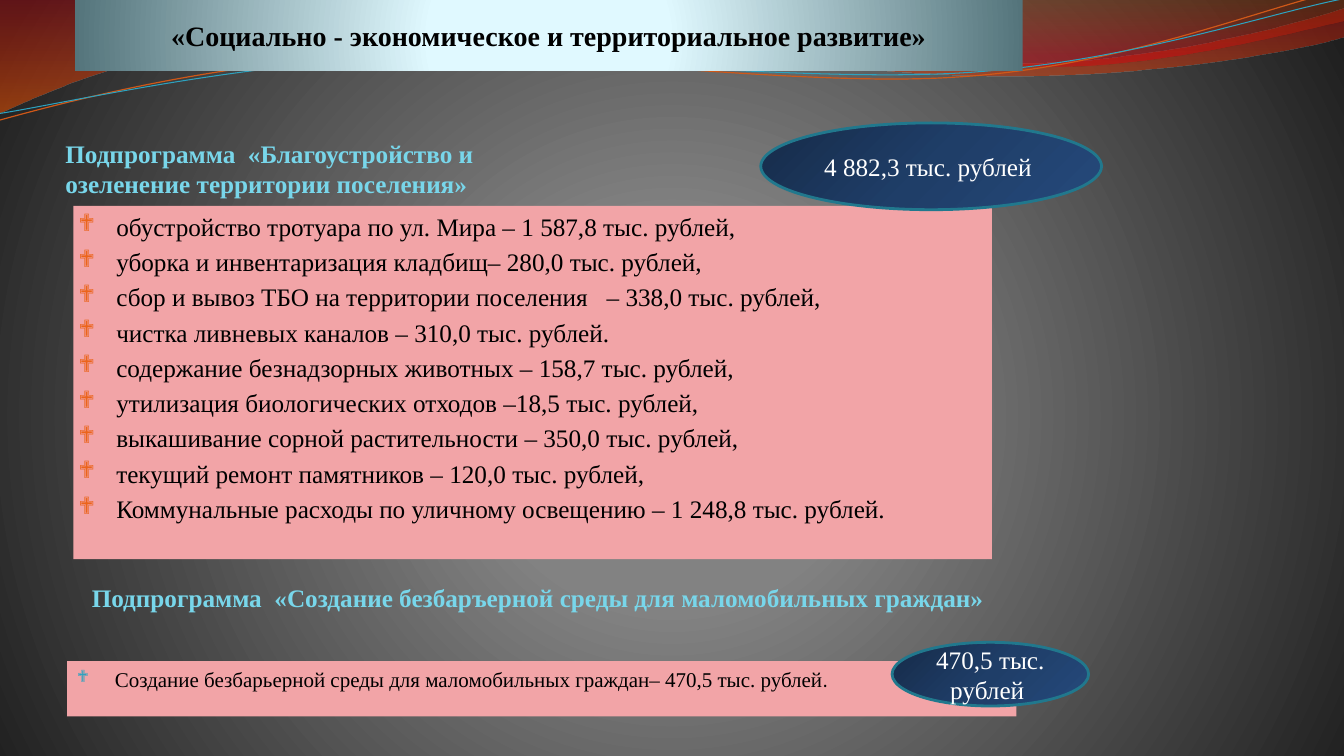
from lxml import etree
from pptx import Presentation
from pptx.dml.color import RGBColor
from pptx.enum import shapes, text
from pptx.oxml import parse_xml
from pptx.oxml.ns import nsdecls, qn
from pptx.util import Pt

BLACK = RGBColor(0x00, 0x00, 0x00)
WHITE = RGBColor(0xFF, 0xFF, 0xFF)
PINK = RGBColor(0xF2, 0xA4, 0xA7)
SKY = RGBColor(0x78, 0xD6, 0xEA)
TEAL = RGBColor(0x2D, 0xA2, 0xBF)
DARK_TEAL = RGBColor(0x21, 0x78, 0x8D)
ORANGE = RGBColor(0xEB, 0x64, 0x1B)
RUST = RGBColor(0xCF, 0x58, 0x18)
# Gradient stops: position %, colour, opacity %
GREY_STOPS = [(0, RGBColor(0x89, 0x89, 0x89), 100), (25, RGBColor(0x82, 0x82, 0x82), 100),
              (100, RGBColor(0x1F, 0x1F, 0x1F), 100)]
ICE_STOPS = [(0, RGBColor(0xE1, 0xFA, 0xFF), 100), (25, RGBColor(0xE0, 0xF9, 0xFF), 100),
             (100, RGBColor(0x54, 0x74, 0x7B), 100)]
NAVY_STOPS = [(0, RGBColor(0x16, 0x2B, 0x49), 100), (50, RGBColor(0x1F, 0x3E, 0x68), 100),
              (100, RGBColor(0x25, 0x49, 0x7B), 100)]
WIDE_WAVE_STOPS = [(0, RGBColor(0xAF, 0x09, 0x11), 45), (100, RGBColor(0xEE, 0x53, 0x00), 55)]
RIGHT_WAVE_STOPS = [(0, RGBColor(0xC2, 0x44, 0x00), 30), (80, RGBColor(0xDC, 0x00, 0x0B), 45)]
BOTTOM_CENTRE = (10, 110, 10, 100)
TOP_LEFT = (0, 0, 100, 100)
FONT = "Times New Roman"


def set_gradient(owner, fill, stops, focus=None):
    """Fill with a circular gradient around focus (l, t, r, b in %), or a vertical one."""
    fill.gradient()
    gradient = owner.element.xpath(".//a:gradFill")[0]
    gradient.clear()
    stop_list = etree.SubElement(gradient, qn("a:gsLst"))
    for position, color, opacity in stops:
        alpha = f'<a:alpha val="{opacity * 1000}"/>' if opacity < 100 else ""
        stop_list.append(parse_xml(
            f'<a:gs {nsdecls("a")} pos="{position * 1000}">'
            f'<a:srgbClr val="{color}">{alpha}</a:srgbClr></a:gs>'))
    if focus:
        direction = etree.SubElement(gradient, qn("a:path"), {"path": "circle"})
        sides = {side: str(value * 1000) for side, value in zip("ltrb", focus)}
        etree.SubElement(direction, qn("a:fillToRect"), sides)
    else:
        etree.SubElement(gradient, qn("a:lin"), {"ang": "5400000", "scaled": "0"})


def format_paragraph(paragraph, size, color, bold=False, bullet=None):
    """Style the runs; bullet is (colour, size %)."""
    if bullet:
        properties = paragraph._p.get_or_add_pPr()
        properties.set("marL", str(Pt(27)))
        properties.set("indent", str(-Pt(27)))
        bullet_color = etree.SubElement(properties, qn("a:buClr"))
        etree.SubElement(bullet_color, qn("a:srgbClr"), val=str(bullet[0]))
        etree.SubElement(properties, qn("a:buSzPct"), val=str(bullet[1] * 1000))
        etree.SubElement(properties, qn("a:buFont"), typeface="Wingdings")
        etree.SubElement(properties, qn("a:buChar"), char="❖")
    for run in paragraph.runs:
        run.font.name = FONT
        run.font.size = Pt(size)
        run.font.bold = bold
        run.font.color.rgb = color


presentation = Presentation()
presentation.slide_width, presentation.slide_height = Pt(960), Pt(540)
slide = presentation.slides.add_slide(presentation.slide_layouts[5])
set_gradient(slide, slide.background.fill, GREY_STOPS, BOTTOM_CENTRE)

# Waves: start point, then line ends (x, y) and Bézier segments (two controls, end)
WAVES = [
    ((0, 0), [(423, -1), (456, 12, 637, 45, 728, 45), (819, 45, 920, 19, 960, 6), (961, 26),
              (944, 32, 835, 55, 716, 54), (597, 54, 366, 20, 247, 24),
              (123, 26, 44, 60, -1, 81)], WIDE_WAVE_STOPS, None, 0),
    ((460, -1), [(489, 8, 654, 45, 738, 47), (822, 50, 923, 23, 960, 15), (960, 0)],
     RIGHT_WAVE_STOPS, None, 0),
    ((-1, 86), [(46, 73, 152, 45, 266, 40), (379, 35, 569, 63, 684, 55),
                (799, 48, 901, 6, 958, -7)], None, RUST, 0.85),
    ((0, 81), [(45, 74, 157, 48, 272, 42), (387, 38, 573, 59, 688, 52),
               (803, 45, 904, 10, 960, -1)], None, TEAL, 0.75),
]
for start, segments, stops, line_color, line_width in WAVES:
    vertices = [(Pt(x), Pt(y)) for segment in segments
                for x, y in zip(segment[::2], segment[1::2])]
    builder = slide.shapes.build_freeform(Pt(start[0]), Pt(start[1]))
    builder.add_line_segments(vertices, close=stops is not None)
    wave = builder.convert_to_shape()
    wave.shadow.inherit = False
    # Join each run of three vertices that belongs to a Bézier segment into one curve
    corners = iter(wave.element.xpath(".//a:lnTo"))
    for segment in segments:
        corner = next(corners)
        if len(segment) == 6:
            curve = etree.Element(qn("a:cubicBezTo"))
            corner.addprevious(curve)
            for vertex in (corner, next(corners), next(corners)):
                curve.append(vertex[0])
                vertex.getparent().remove(vertex)
    if stops:
        set_gradient(wave, wave.fill, stops)
        wave.line.fill.background()
    else:
        wave.fill.background()
        wave.line.color.rgb = line_color
        wave.line.width = Pt(line_width)

title = slide.shapes.title
title.element.getparent().append(title.element)  # in front of the waves
title.left, title.top, title.width, title.height = Pt(53.5), Pt(0), Pt(677), Pt(50.5)
set_gradient(title, title.fill, ICE_STOPS, BOTTOM_CENTRE)
frame = title.text_frame
frame.text = "«Социально - экономическое и территориальное развитие»"
frame.auto_size = text.MSO_AUTO_SIZE.NONE
frame.vertical_anchor = text.MSO_ANCHOR.MIDDLE
frame.margin_left = frame.margin_top = frame.margin_right = frame.margin_bottom = 0
frame.paragraphs[0].alignment = text.PP_ALIGN.CENTER
format_paragraph(frame.paragraphs[0], 20, BLACK, bold=True)

EXPENSES = [
    "обустройство тротуара по ул. Мира – 1 587,8 тыс. рублей,",
    "уборка и инвентаризация кладбищ– 280,0 тыс. рублей,",
    "сбор и вывоз ТБО на территории поселения   – 338,0 тыс. рублей,",
    "чистка ливневых каналов – 310,0 тыс. рублей.",
    "содержание безнадзорных животных – 158,7 тыс. рублей,",
    "утилизация биологических отходов –18,5 тыс. рублей,",
    "выкашивание сорной растительности – 350,0 тыс. рублей,",
    "текущий ремонт памятников – 120,0 тыс. рублей,",
    "Коммунальные расходы по уличному освещению – 1 248,8 тыс. рублей.",
]
ACCESS = ["Создание безбарьерной среды для маломобильных граждан– 470,5 тыс. рублей"]
# Place, lines, size, bullet, side margin, top margin
LISTS = [((52.5, 147, 656, 252.5), EXPENSES, 18, (ORANGE, 95), 3.6, 3.8),
         ((48, 472.2, 678, 39.5), ACCESS, 15, (TEAL, 80), 7.2, 3.6)]
for place, lines, size, bullet, side_margin, top_margin in LISTS:
    box = slide.shapes.add_textbox(*map(Pt, place))
    box.fill.solid()
    box.fill.fore_color.rgb = PINK
    frame = box.text_frame
    frame.word_wrap = True
    frame.margin_left = frame.margin_right = Pt(side_margin)
    frame.margin_top = Pt(top_margin)
    frame.text = "\n".join(lines)
    for index, paragraph in enumerate(frame.paragraphs):
        format_paragraph(paragraph, size, BLACK, bullet=bullet)
        if index:
            paragraph.space_before = Pt(3.6)
full_stop = frame.paragraphs[0].add_run()
full_stop.text = "."
full_stop.font.name = "Cambria"
full_stop.font.size = Pt(15)
full_stop.font.color.rgb = BLACK

HEADINGS = [
    ((39.6, 95, 312.5, 51), "Подпрограмма  «Благоустройство и озеленение территории поселения»"),
    ((58.5, 412.5, 667.5, 29),
     "Подпрограмма  «Создание безбаръерной среды для маломобильных граждан»"),
]
for place, wording in HEADINGS:
    heading = slide.shapes.add_textbox(*map(Pt, place))
    heading.text_frame.word_wrap = True
    heading.text_frame.text = wording
    format_paragraph(heading.text_frame.paragraphs[0], 18, SKY, bold=True)

TOTALS = [((543.4, 87.8, 243.4, 62), "4 882,3 тыс. рублей "),
          ((637.2, 458.8, 140.4, 45.5), "470,5 тыс. рублей ")]
for place, wording in TOTALS:
    total = slide.shapes.add_shape(shapes.MSO_SHAPE.OVAL, *map(Pt, place))
    total.shadow.inherit = False
    set_gradient(total, total.fill, NAVY_STOPS, TOP_LEFT)
    total.line.color.rgb = DARK_TEAL
    total.line.width = Pt(2)
    frame = total.text_frame
    frame.word_wrap = True
    frame.vertical_anchor = text.MSO_ANCHOR.MIDDLE
    frame.text = wording
    frame.paragraphs[0].alignment = text.PP_ALIGN.CENTER
    format_paragraph(frame.paragraphs[0], 18, WHITE)

presentation.save("out.pptx")
